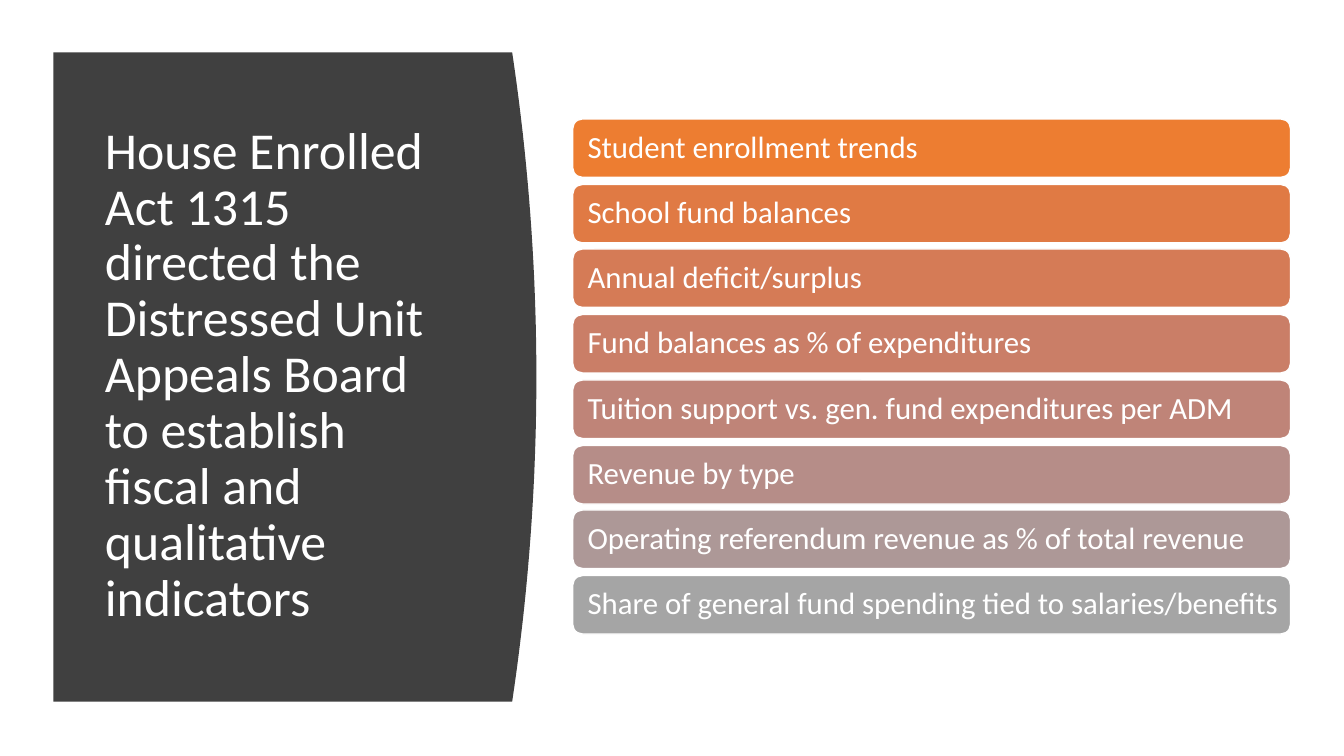
from dataclasses import dataclass

from pptx import Presentation
from pptx.dml.color import RGBColor
from pptx.enum.shapes import MSO_SHAPE as Shape
from pptx.enum.text import MSO_ANCHOR as Anchor, MSO_AUTO_SIZE as AutoSize, PP_ALIGN as Align
from pptx.util import Pt

EMU_PER_PX = 9144  # 100 px to the inch


@dataclass(frozen=True)
class Theme:
    font: str = "Calibri"
    title_size: int = 37
    bar_size: int = 22
    line_spacing: float = 0.9
    panel: str = "404040"
    white: str = "FFFFFF"
    bars: tuple = ("ED7D31", "E07A44", "D57B56", "CA7E67",
                   "BF8478", "B68D88", "AD9897", "A5A5A5")


TITLE = ("House Enrolled Act 1315 directed the Distressed Unit Appeals Board "
         "to establish fiscal and qualitative indicators")
INDICATORS = [
    "Student enrollment trends",
    "School fund balances",
    "Annual deficit/surplus",
    "Fund balances as % of expenditures",
    "Tuition support vs. gen. fund expenditures per ADM",
    "Revenue by type",
    "Operating referendum revenue as % of total revenue",
    "Share of general fund spending tied to salaries/benefits",
]


def px(length):
    return round(length * EMU_PER_PX)


class SlideBuilder:
    def __init__(self, slide, theme):
        self.slide = slide
        self.theme = theme

    def fill(self, shape, color):
        shape.shadow.inherit = False
        shape.fill.solid()
        shape.fill.fore_color.rgb = RGBColor.from_string(color)

    def text(self, shape, text, size):
        frame = shape.text_frame
        frame.text = text
        frame.word_wrap = True
        frame.auto_size = AutoSize.NONE
        frame.vertical_anchor = Anchor.MIDDLE
        paragraph = frame.paragraphs[0]
        paragraph.alignment = Align.LEFT
        paragraph.line_spacing = self.theme.line_spacing
        font = paragraph.runs[0].font
        font.name = self.theme.font
        font.size = Pt(size)
        font.color.rgb = RGBColor.from_string(self.theme.white)

    def title(self, text, left, top, width, height):
        title = self.slide.shapes.title
        title.left, title.top = px(left), px(top)
        title.width, title.height = px(width), px(height)
        self.text(title, text, self.theme.title_size)

    def curved_panel(self, left, top, width, height, bulge, steps=40):
        """A block whose right side bows outward as a parabola."""
        builder = self.slide.shapes.build_freeform(px(left), px(top))
        edge = []
        for step in range(steps + 1):
            offset = 2 * step / steps - 1  # -1 at the top, 1 at the bottom
            edge.append((px(left + width - bulge * offset ** 2),
                         px(top + height * step / steps)))
        builder.add_line_segments(edge + [(px(left), px(top + height))], close=True)
        panel = builder.convert_to_shape()
        self.fill(panel, self.theme.panel)
        panel.line.fill.background()
        # Keep the panel behind the title
        self.slide.shapes.title.element.addprevious(panel.element)

    def bar(self, text, color, left, top, width, height):
        bar = self.slide.shapes.add_shape(
            Shape.ROUNDED_RECTANGLE, px(left), px(top), px(width), px(height))
        self.fill(bar, color)
        bar.line.color.rgb = RGBColor.from_string(self.theme.white)
        bar.line.width = Pt(1)
        self.text(bar, text, self.theme.bar_size)
        bar.text_frame.margin_left = px(12)
        bar.text_frame.margin_right = px(8)


def main():
    presentation = Presentation()
    presentation.slide_width, presentation.slide_height = px(1333), px(750)
    theme = Theme()
    slide = presentation.slides.add_slide(presentation.slide_layouts[5])
    builder = SlideBuilder(slide, theme)

    # Left panel with the title
    builder.curved_panel(53, 52, 479, 644, bulge=24)
    builder.title(TITLE, 94, 111, 374, 524)

    # Indicator bars, evenly spread from the first top to the last
    first_top, last_top = 118, 571
    pitch = (last_top - first_top) / (len(INDICATORS) - 1)
    for index, (indicator, color) in enumerate(zip(INDICATORS, theme.bars)):
        builder.bar(indicator, color, 568, round(first_top + index * pitch), 712, 58)

    presentation.save("out.pptx")


if __name__ == "__main__":
    main()
